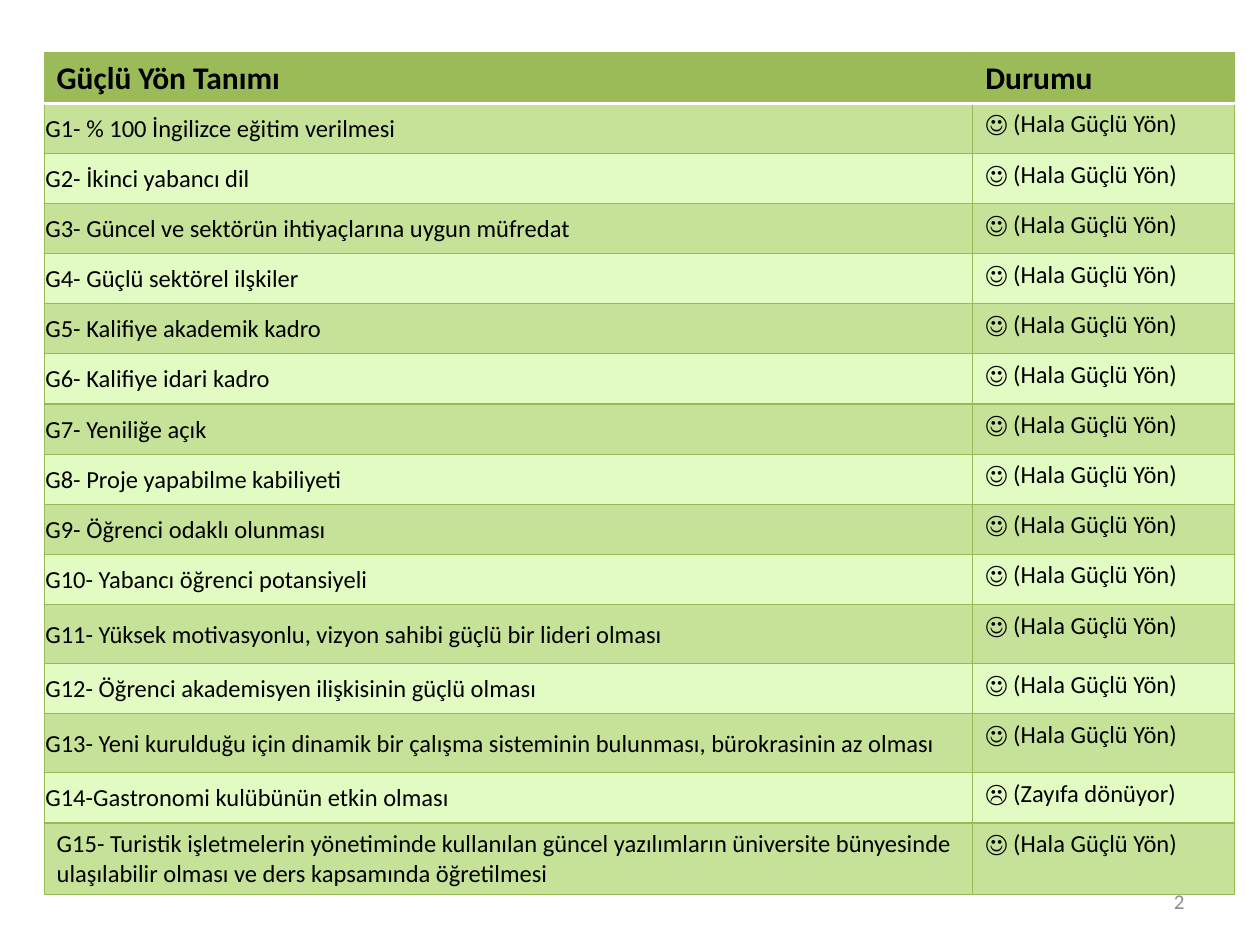
import dataclasses

import lxml.etree
import pptx
import pptx.dml.color
import pptx.enum.text
import pptx.oxml.ns
import pptx.util

RGB = pptx.dml.color.RGBColor
Inches = pptx.util.Inches
Pt = pptx.util.Pt
Anchor = pptx.enum.text.MSO_ANCHOR

WIDE, HIGH = 10, 7.5
BLACK = RGB(0x00, 0x00, 0x00)
WHITE = RGB(0xFF, 0xFF, 0xFF)
GRAY = RGB(0x8C, 0x8C, 0x8C)
HEAD = RGB(0x9B, 0xBB, 0x59)
DARK = RGB(0xC6, 0xE1, 0x98)
LIGHT = RGB(0xE2, 0xFB, 0xC2)
EDGE = RGB(0x98, 0xB9, 0x55)
FONT = "Calibri"
STRONG = "☺ (Hala Güçlü Yön)"
WEAK = "☹ (Zayıfa dönüyor)"

# Table grid in inches: tall rows are fixed, the others share the rest
LEFT, TOP, TALL = 0.35, 0.42, 6.68
COLS = (7.37, 2.08)
FIXED = {11: 0.47, 13: 0.47, 15: 0.57}


@dataclasses.dataclass(frozen=True)
class Row:
    text: str
    state: str = STRONG
    tight: bool = True


ROWS = (
    Row("G1- % 100 İngilizce eğitim verilmesi"),
    Row("G2- İkinci yabancı dil"),
    Row("G3- Güncel ve sektörün ihtiyaçlarına uygun müfredat"),
    Row("G4- Güçlü sektörel ilşkiler"),
    Row("G5- Kalifiye akademik kadro"),
    Row("G6- Kalifiye idari kadro"),
    Row("G7- Yeniliğe açık"),
    Row("G8- Proje yapabilme kabiliyeti"),
    Row("G9- Öğrenci odaklı olunması"),
    Row("G10- Yabancı öğrenci potansiyeli"),
    Row("G11- Yüksek motivasyonlu, vizyon sahibi güçlü bir lideri olması"),
    Row("G12- Öğrenci akademisyen ilişkisinin güçlü olması"),
    Row("G13- Yeni kurulduğu için dinamik bir çalışma sisteminin bulunması, "
        "bürokrasinin az olması"),
    Row("G14-Gastronomi kulübünün etkin olması", WEAK),
    Row("G15- Turistik işletmelerin yönetiminde kullanılan güncel yazılımların "
        "üniversite bünyesinde ulaşılabilir olması ve ders kapsamında "
        "öğretilmesi", tight=False),
)


def write(frame, text: str, size: float, color: RGB, bold: bool = False) -> None:
    par = frame.paragraphs[0]
    par.text = text
    par.font.name, par.font.size = FONT, Pt(size)
    par.font.bold, par.font.color.rgb = bold, color


def edge(cell, side: str, color: RGB, width: float, slot: int) -> None:
    qn = pptx.oxml.ns.qn
    line = lxml.etree.Element(qn(f"a:ln{side}"), w=str(Pt(width)))
    fill = lxml.etree.SubElement(line, qn("a:solidFill"))
    lxml.etree.SubElement(fill, qn("a:srgbClr"), val=str(color))
    cell._tc.get_or_add_tcPr().insert(slot, line)


def paint(cell, text: str, row: int) -> None:
    head = row == 0
    cell.fill.solid()
    cell.fill.fore_color.rgb = HEAD if head else DARK if row % 2 else LIGHT
    write(cell.text_frame, text, 18 if head else 14, BLACK, head)
    for slot, side in enumerate("LRTB"):
        # A white rule parts the heading from the body
        rule = (row, side) in ((0, "B"), (1, "T"))
        edge(cell, side, WHITE if rule else EDGE, 2 if rule else 0.75, slot)


def tighten(cell) -> None:
    cell.vertical_anchor = Anchor.MIDDLE
    cell.margin_left = cell.margin_right = cell.margin_top = Inches(0.01)
    cell.margin_bottom = 0


def add_page(slide, text: str) -> None:
    box = slide.shapes.add_textbox(
        Inches(7.17), Inches(6.95), Inches(2.33), Inches(0.4))
    frame = box.text_frame
    frame.word_wrap = True
    frame.vertical_anchor = Anchor.MIDDLE
    write(frame, text, 12, GRAY)
    frame.paragraphs[0].alignment = pptx.enum.text.PP_ALIGN.RIGHT


def add_grid(slide) -> None:
    count = len(ROWS) + 1
    table = slide.shapes.add_table(
        count, len(COLS), Inches(LEFT), Inches(TOP),
        Inches(sum(COLS)), Inches(TALL)).table
    for col, width in zip(table.columns, COLS):
        col.width = Inches(width)
    share = (TALL - sum(FIXED.values())) / (count - len(FIXED))
    lines = (Row("Güçlü Yön Tanımı", "Durumu", tight=False),) + ROWS
    for num, line in enumerate(lines):
        table.rows[num].height = Inches(FIXED.get(num, share))
        paint(table.cell(num, 0), line.text, num)
        paint(table.cell(num, 1), line.state, num)
        if line.tight:
            tighten(table.cell(num, 0))


def main() -> None:
    deck = pptx.Presentation()
    deck.slide_width, deck.slide_height = Inches(WIDE), Inches(HIGH)
    slide = deck.slides.add_slide(deck.slide_layouts[6])
    # Page number, then the table of strengths
    add_page(slide, "2")
    add_grid(slide)
    deck.save("out.pptx")


if __name__ == "__main__":
    main()
